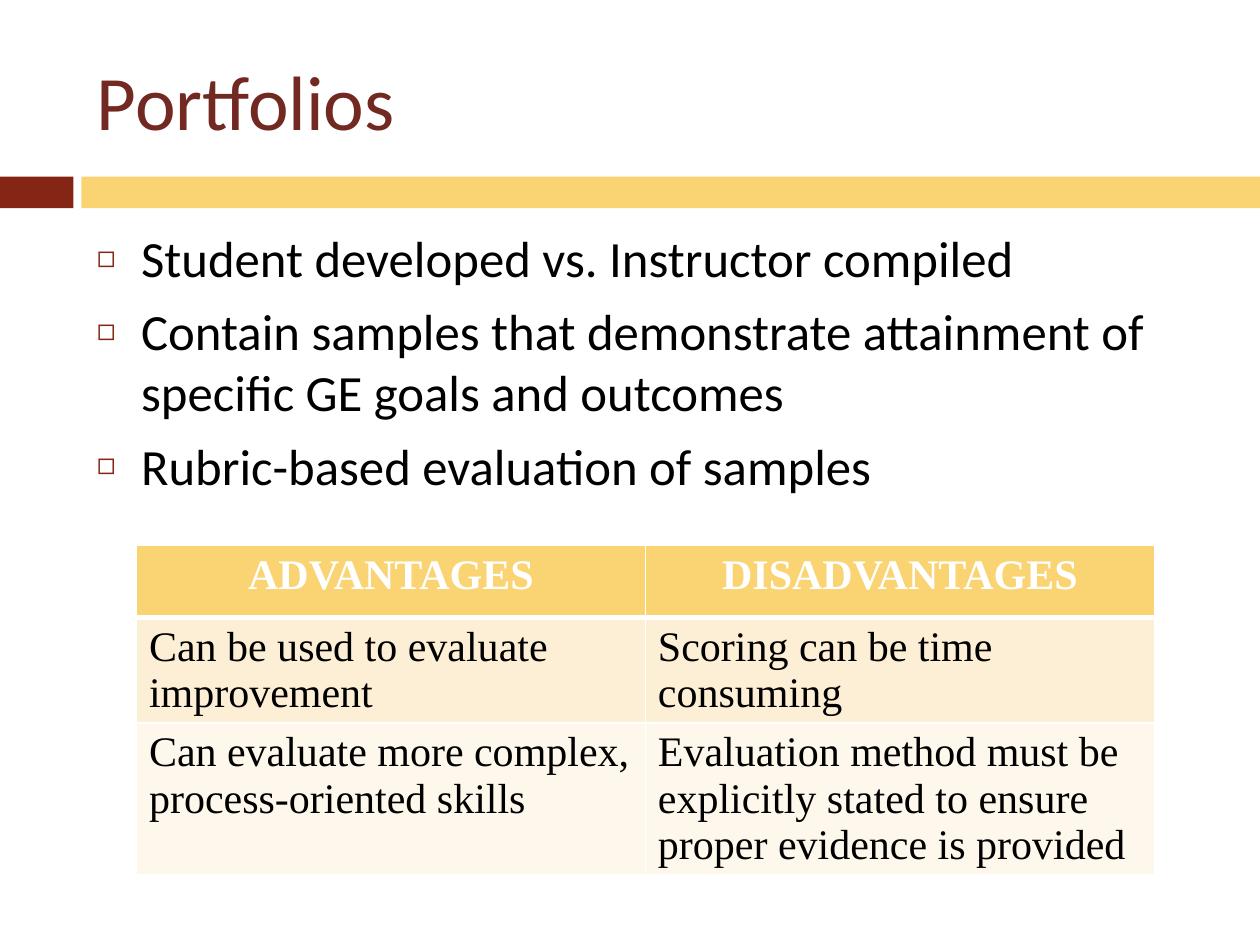
from lxml.etree import SubElement
from pptx import Presentation
from pptx.dml.color import RGBColor
from pptx.enum.shapes import MSO_SHAPE
from pptx.enum.text import MSO_ANCHOR, MSO_AUTO_SIZE, PP_ALIGN
from pptx.oxml.ns import qn
from pptx.util import Cm, Pt

MAROON = "852515"
GOLD = "FAD372"
WHITE = "FFFFFF"
BODY_ITEMS = [
    "Student developed vs. Instructor compiled",
    "Contain samples that demonstrate attainment of specific GE goals and outcomes",
    "Rubric-based evaluation of samples",
]
TABLE_ROWS = [
    ("ADVANTAGES", "DISADVANTAGES"),
    ("Can be used to evaluate improvement", "Scoring can be time consuming"),
    (
        "Can evaluate more complex, process-oriented skills",
        "Evaluation method must be explicitly stated to ensure proper evidence is provided",
    ),
]
ROW_FILLS = [GOLD, "FDEFD5", "FEF7EB"]
ROW_HEIGHTS = [1.45, 1.04, 1.04]


def color(value):
    return RGBColor.from_string(value)


def set_fill(target, value):
    target.fill.solid()
    target.fill.fore_color.rgb = color(value)


def write_text(paragraph, text, font="Calibri", size=29, ink="000000",
               bold=False, align=PP_ALIGN.LEFT, before=0):
    paragraph.alignment = align
    paragraph.space_before = Pt(before)
    run = paragraph.add_run()
    run.text = text
    run.font.name = font
    run.font.size = Pt(size)
    run.font.bold = bold
    run.font.color.rgb = color(ink)


def place(shape, left, top, width, height):
    shape.left, shape.top = Cm(left), Cm(top)
    shape.width, shape.height = Cm(width), Cm(height)


def set_bullet(paragraph, character, ink, percent, indent):
    properties = paragraph._p.get_or_add_pPr()
    properties.set("marL", str(Cm(indent)))
    properties.set("indent", str(-Cm(indent)))
    bullet_color = SubElement(properties, qn("a:buClr"))
    SubElement(bullet_color, qn("a:srgbClr"), val=ink)
    SubElement(properties, qn("a:buSzPct"), val=str(percent * 1000))
    SubElement(properties, qn("a:buChar"), char=character)


def set_borders(cell, **widths):
    properties = cell._tc.get_or_add_tcPr()
    for position, (side, width) in enumerate(widths.items()):
        line = properties.makeelement(qn(f"a:ln{side}"), {"w": str(Pt(width))})
        fill = SubElement(line, qn("a:solidFill"))
        SubElement(fill, qn("a:srgbClr"), val=WHITE)
        properties.insert(position, line)


def add_band(slide, left, top, width, height):
    accent_width, gap = 1.48, 0.16
    rule_left = accent_width + gap
    for offset, part_width, fill in [
        (0, accent_width, MAROON),
        (rule_left, width - rule_left, GOLD),
    ]:
        shape = slide.shapes.add_shape(
            MSO_SHAPE.RECTANGLE, Cm(left + offset), Cm(top), Cm(part_width), Cm(height)
        )
        shape.shadow.inherit = False
        set_fill(shape, fill)
        shape.line.fill.background()


def fill_title(slide, left, top, width, height):
    title = slide.shapes.title
    place(title, left, top, width, height)
    frame = title.text_frame
    frame.auto_size = MSO_AUTO_SIZE.NONE
    frame.vertical_anchor = MSO_ANCHOR.MIDDLE
    write_text(frame.paragraphs[0], "Portfolios", size=44, ink="712921")


def fill_body(slide, left, top, width, height):
    body = slide.placeholders[1]
    place(body, left, top, width, height)
    frame = body.text_frame
    frame.auto_size = MSO_AUTO_SIZE.NONE
    for index, text in enumerate(BODY_ITEMS):
        paragraph = frame.add_paragraph() if index else frame.paragraphs[0]
        write_text(paragraph, text, before=7)
        set_bullet(paragraph, "◻", MAROON, percent=60, indent=0.89)


def add_comparison(slide, left, top, width):
    table = slide.shapes.add_table(
        len(TABLE_ROWS), 2, Cm(left), Cm(top), Cm(width), Cm(sum(ROW_HEIGHTS))
    ).table
    for column in table.columns:
        column.width = Cm(width / 2)
    for row_index, texts in enumerate(TABLE_ROWS):
        header = row_index == 0
        table.rows[row_index].height = Cm(ROW_HEIGHTS[row_index])
        for column_index, text in enumerate(texts):
            cell = table.cell(row_index, column_index)
            set_fill(cell, ROW_FILLS[row_index])
            set_borders(cell, L=1, R=1, T=3 if row_index == 1 else 1, B=3 if header else 1)
            write_text(
                cell.text_frame.paragraphs[0], text, font="Times New Roman", size=24,
                ink=WHITE if header else "000000", bold=header,
                align=PP_ALIGN.CENTER if header else PP_ALIGN.LEFT,
            )


def main():
    presentation = Presentation()
    presentation.slide_width, presentation.slide_height = Cm(25.4), Cm(19.05)
    slide = presentation.slides.add_slide(presentation.slide_layouts[1])
    add_band(slide, 0, 3.56, 25.4, 0.64)
    fill_title(slide, 1.7, 0.64, 22.66, 2.74)
    fill_body(slide, 1.7, 4.45, 22.66, 12.5)
    add_comparison(slide, 2.75, 11, 20.52)
    presentation.save("out.pptx")


if __name__ == "__main__":
    main()
